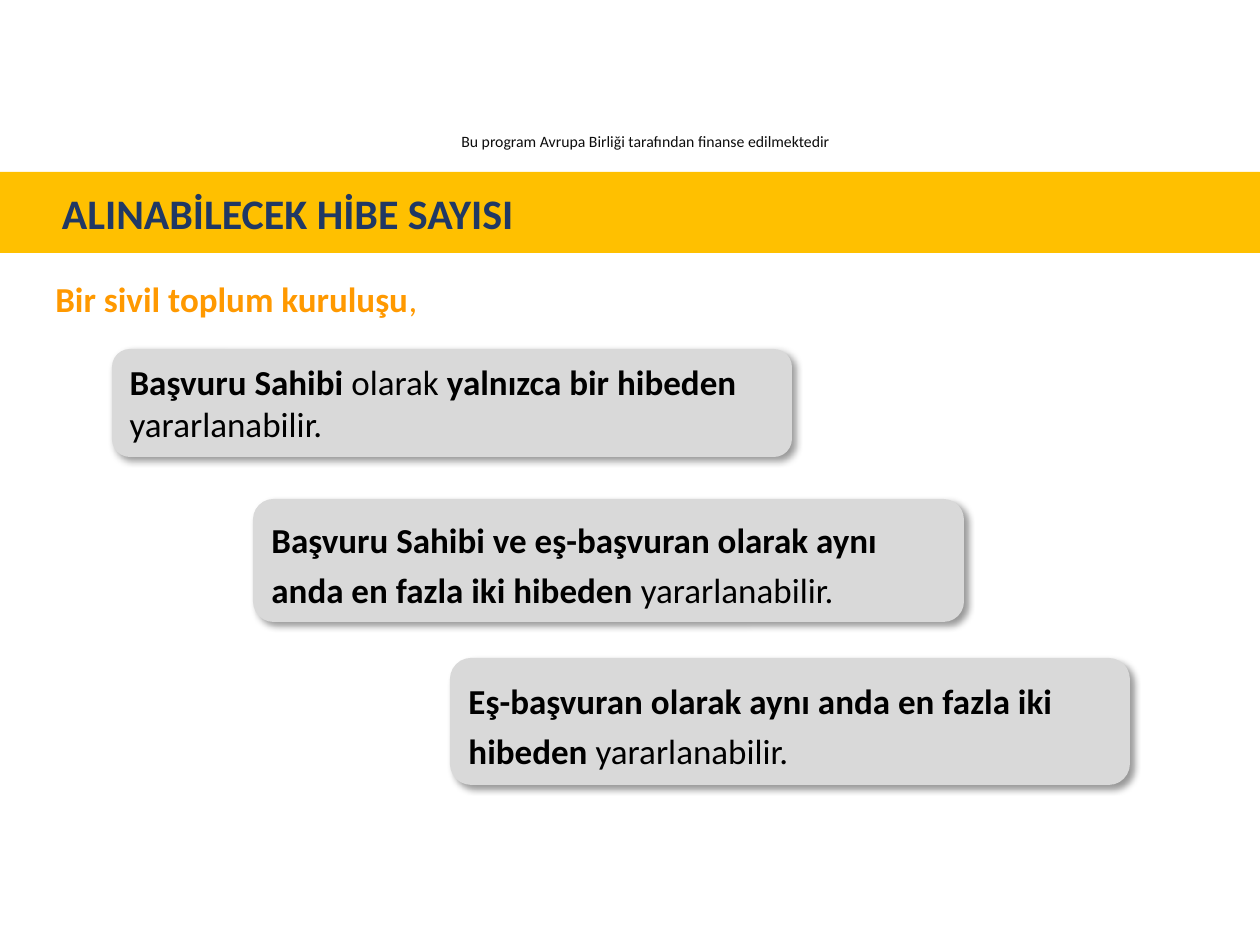
from lxml.etree import SubElement
from pptx import Presentation
from pptx.dml.color import RGBColor
from pptx.enum.shapes import MSO_SHAPE
from pptx.enum.text import MSO_ANCHOR, PP_ALIGN
from pptx.oxml.ns import qn
from pptx.util import Emu, Pt

PX = 914400 / 126
COLORS = {
    "band": "FFC000",
    "card": "D9D9D9",
    "title": "203864",
    "lead": "FF9900",
    "text": "000000",
    "caption": "0D0D0D",
}

presentation = Presentation()
presentation.slide_width = Emu(round(1260 * PX))
presentation.slide_height = Emu(round(945 * PX))
slide = presentation.slides.add_slide(presentation.slide_layouts[6])


def add_block(box, runs, size, color, fill=None, preset=MSO_SHAPE.RECTANGLE,
              align=PP_ALIGN.LEFT, anchor=MSO_ANCHOR.MIDDLE, spacing=1.0):
    """Add a one-paragraph block; runs are (text, bold) pairs, no fill makes a text box."""
    lengths = [Emu(round(length * PX)) for length in box]
    if fill:
        shape = slide.shapes.add_shape(preset, *lengths)
        shape.shadow.inherit = False
        shape.fill.solid()
        shape.fill.fore_color.rgb = RGBColor.from_string(COLORS[fill])
        shape.line.fill.background()
    else:
        shape = slide.shapes.add_textbox(*lengths)
    frame = shape.text_frame
    frame.word_wrap = True
    frame.vertical_anchor = anchor
    paragraph = frame.paragraphs[0]
    paragraph.alignment = align
    paragraph.line_spacing = spacing
    for text, bold in runs:
        run = paragraph.add_run()
        run.text = text
        font_format = {"name": "Calibri", "size": Pt(size), "bold": bold}
        for name, value in font_format.items():
            setattr(run.font, name, value)
        run.font.color.rgb = RGBColor.from_string(COLORS[color])
    return shape


def add_soft_shadow(shape):
    effects = shape._element.spPr.find(qn("a:effectLst"))
    shadow = SubElement(effects, qn("a:outerShdw"), blurRad=str(Pt(4)),
                        dist=str(Pt(3)), dir="2700000", algn="tl", rotWithShape="0")
    color = SubElement(shadow, qn("a:srgbClr"), val=COLORS["text"])
    SubElement(color, qn("a:alpha"), val="40000")


# Caption, title band and lead-in
add_block((352, 126, 590, 32),
          [("Bu program Avrupa Birliği tarafından finanse edilmektedir ", False)],
          9, "caption", align=PP_ALIGN.CENTER, anchor=MSO_ANCHOR.TOP)
band = add_block((0, 172, 1260, 81), [("ALINABİLECEK HİBE SAYISI", True)],
                 24, "title", fill="band")
band.text_frame.margin_left = Emu(round(62 * PX))
add_block((43, 271, 745, 71), [("Bir sivil toplum kuruluşu", True), (",", False)],
          20, "lead", anchor=MSO_ANCHOR.TOP)

# Staggered rule cards
cards = [
    ((112, 349, 680, 108), 1.0,
     [("Başvuru Sahibi ", True), ("olarak ", False),
      ("yalnızca bir hibeden ", True), ("yararlanabilir.", False)]),
    ((253, 499, 711, 123), 1.2,
     [("Başvuru Sahibi ve eş-başvuran olarak aynı anda en fazla iki hibeden ", True),
      ("yararlanabilir.", False)]),
    ((450, 658, 680, 127), 1.2,
     [("Eş-başvuran olarak aynı anda en fazla iki hibeden", True),
      (" yararlanabilir.", False)]),
]
for box, spacing, runs in cards:
    card = add_block(box, runs, 20, "text", fill="card",
                     preset=MSO_SHAPE.ROUNDED_RECTANGLE, spacing=spacing)
    add_soft_shadow(card)

presentation.save("out.pptx")
